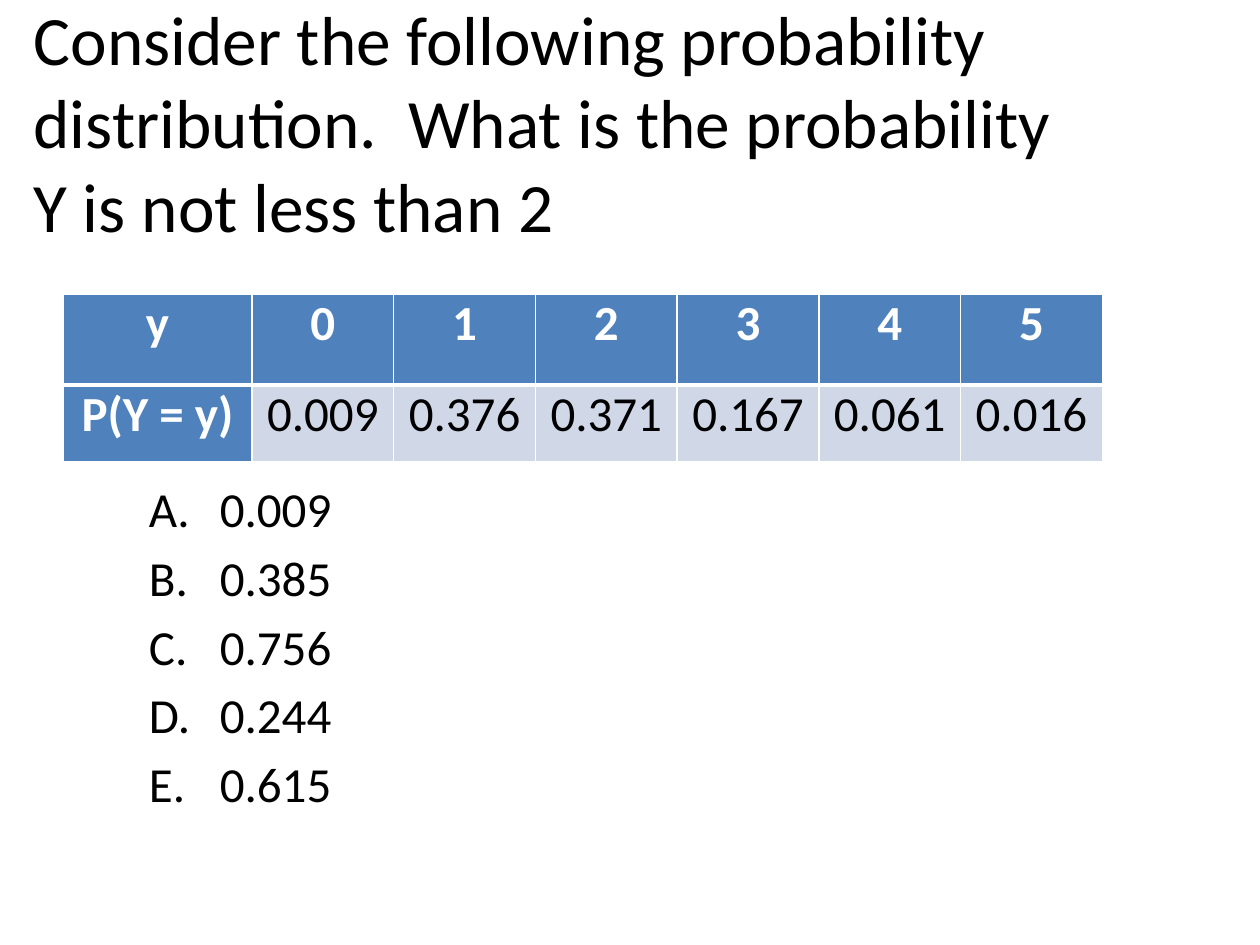
from lxml import etree
from pptx import Presentation
from pptx.dml.color import RGBColor
from pptx.enum.text import MSO_ANCHOR, PP_ALIGN
from pptx.oxml.ns import qn
from pptx.util import Pt

LEFT, CENTER = PP_ALIGN.LEFT, PP_ALIGN.CENTER
MIDDLE = MSO_ANCHOR.MIDDLE
BLACK = RGBColor(0x00, 0x00, 0x00)
WHITE = RGBColor(0xFF, 0xFF, 0xFF)
BLUE = RGBColor(0x4F, 0x81, 0xBD)
PALE_BLUE = RGBColor(0xD0, 0xD8, 0xE8)


def set_font(para, size, color, bold=False):
    para.font.name = "Calibri"
    para.font.size = Pt(size)
    para.font.color.rgb = color
    para.font.bold = bold


def add_borders(cell, widths):
    properties = cell._tc.get_or_add_tcPr()
    for position, (side, width) in enumerate(widths.items()):
        line = etree.Element(qn(f"a:{side}"), w=str(Pt(width)))
        fill = etree.SubElement(line, qn("a:solidFill"))
        etree.SubElement(fill, qn("a:srgbClr"), val=str(WHITE))
        properties.insert(position, line)


deck = Presentation()
deck.slide_width, deck.slide_height = Pt(720), Pt(540)
page = deck.slides.add_slide(deck.slide_layouts[5])

title = page.shapes.title
title.left, title.top, title.width, title.height = Pt(12), Pt(12), Pt(612), Pt(162)
title.text_frame.text = (
    "Consider the following probability distribution.  "
    "What is the probability Y is not less than 2\v"
)
title.text_frame.vertical_anchor = MIDDLE
title.text_frame.paragraphs[0].alignment = LEFT
set_font(title.text_frame.paragraphs[0], 39.6, BLACK)

rows = [
    ["y", "0", "1", "2", "3", "4", "5"],
    ["P(Y = y)", "0.009", "0.376", "0.371", "0.167", "0.061", "0.016"],
]
distribution = page.shapes.add_table(2, 7, Pt(36), Pt(168), Pt(594), Pt(96)).table
for index, column in enumerate(distribution.columns):
    column.width = Pt(81 if index else 108)
distribution.rows[0].height = Pt(52)
distribution.rows[1].height = Pt(44)
for row_index, row in enumerate(rows):
    for column_index, value in enumerate(row):
        is_header = row_index == 0 or column_index == 0
        cell = distribution.cell(row_index, column_index)
        cell.text = value
        cell.margin_left = cell.margin_right = Pt(5)
        cell.margin_top = cell.margin_bottom = Pt(0)
        cell.fill.solid()
        cell.fill.fore_color.rgb = BLUE if is_header else PALE_BLUE
        para = cell.text_frame.paragraphs[0]
        para.alignment = CENTER
        set_font(para, 28, WHITE if is_header else BLACK, is_header)
        top, bottom = (1, 3) if row_index == 0 else (3, 1)
        add_borders(cell, {"lnL": 1, "lnR": 1, "lnT": top, "lnB": bottom})

answers = page.shapes.add_textbox(Pt(42), Pt(270), Pt(270), Pt(234)).text_frame
answers.word_wrap = True
for index, answer in enumerate(["0.009", "0.385", "0.756", "0.244", "0.615"]):
    para = answers.add_paragraph() if index else answers.paragraphs[0]
    para.text = answer
    para.space_before = Pt(5.6)
    set_font(para, 28, BLACK)
    properties = para._p.get_or_add_pPr()
    properties.set("marL", str(Pt(76.5)))
    properties.set("indent", str(Pt(-40.5)))
    numbering = etree.Element(qn("a:buAutoNum"), type="alphaUcPeriod")
    properties.find(qn("a:defRPr")).addprevious(numbering)

deck.save("out.pptx")
